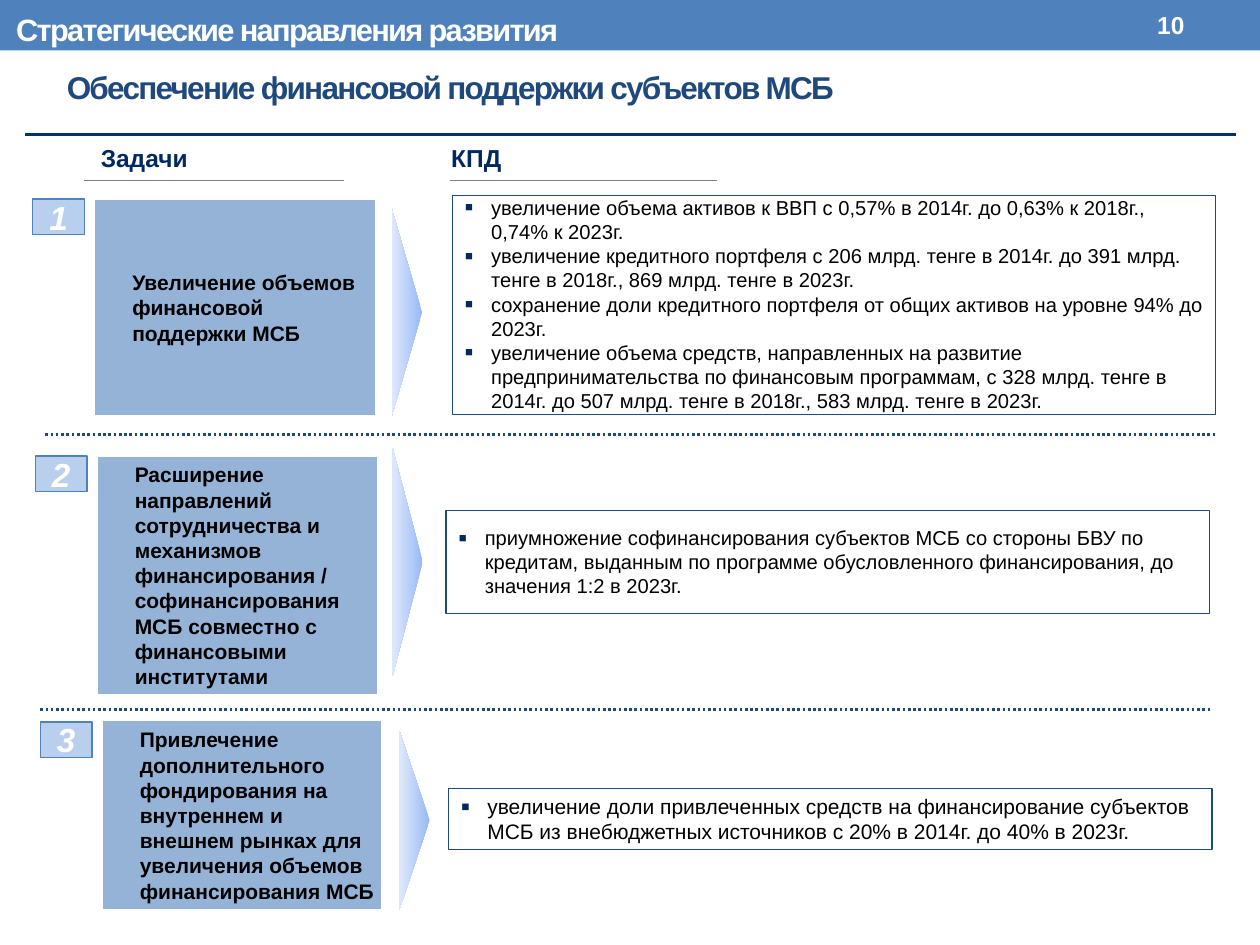
from lxml.etree import SubElement as Sub
from pptx import Presentation
from pptx.dml.color import RGBColor
from pptx.enum.dml import MSO_LINE
from pptx.enum.shapes import MSO_CONNECTOR, MSO_SHAPE as Kind
from pptx.enum.text import MSO_ANCHOR as Anchor, MSO_AUTO_SIZE as Auto, PP_ALIGN as Align
from pptx.oxml.ns import qn
from pptx.util import Inches, Pt

BLUE, NAVY, DARK, WHITE, BLACK = "4F81BD", "1F497D", "002960", "FFFFFF", "000000"

# number spot, task box, task text, space before and after the task
TASKS = [
    ((0.26, 1.58), (0.75, 1.58, 2.23, 1.72),
     "Увеличение объемов финансовой поддержки МСБ", 0, 3),
    ((0.28, 3.62), (0.77, 3.62, 2.23, 1.89),
     "Расширение направлений сотрудничества и механизмов финансирования / "
     "софинансирования МСБ совместно с финансовыми институтами", 4, 3),
    ((0.32, 5.73), (0.81, 5.72, 2.22, 1.5),
     "Привлечение дополнительного фондирования на внутреннем и внешнем рынках "
     "для увеличения объемов финансирования МСБ", 0, 0),
]
# box, top and bottom inset, text size, space after, items
GOALS = [
    ((3.59, 1.55, 6.06, 1.74), 0, 11.5, 0, [
        "увеличение объема активов к ВВП с 0,57% в 2014г. до 0,63% к 2018г., 0,74% к 2023г.",
        "увеличение кредитного портфеля с 206 млрд. тенге в 2014г. до 391 млрд. тенге "
        "в 2018г., 869 млрд. тенге в 2023г.",
        "сохранение доли кредитного портфеля от общих активов на уровне 94% до 2023г.",
        "увеличение объема средств, направленных на развитие предпринимательства по "
        "финансовым программам, с 328 млрд. тенге в 2014г. до 507 млрд. тенге в 2018г., "
        "583 млрд. тенге в 2023г."]),
    ((3.54, 4.05, 6.06, 0.82), 0.12, 11.5, 6, [
        "приумножение софинансирования субъектов МСБ со стороны БВУ по кредитам, "
        "выданным по программе обусловленного финансирования, до значения 1:2 в 2023г."]),
    ((3.56, 6.26, 6.06, 0.48), 0.04, 12, 6, [
        "увеличение доли привлеченных средств на финансирование субъектов МСБ из "
        "внебюджетных источников с 20% в 2014г. до 40% в 2023г."]),
]
WEDGES = [(2.41, 2.36, 1.64), (2.33, 4.34, 1.81), (2.58, 6.39, 1.42)]


def rgb(code):
    return RGBColor.from_string(code)


def place(box):
    return [Inches(v) for v in box]


def write(shape, lines, size, color, bold=True, italic=False, align=Align.LEFT,
          anchor=Anchor.MIDDLE, inset=(0.1, 0.05, 0.1, 0.05), tight=False):
    frame = shape.text_frame
    frame.text = "\n".join(lines)
    frame.word_wrap, frame.auto_size = True, Auto.NONE
    frame.vertical_anchor = anchor
    (frame.margin_left, frame.margin_top,
     frame.margin_right, frame.margin_bottom) = place(inset)
    for para in frame.paragraphs:
        para.alignment = align
        for run in para.runs:
            font = run.font
            font.name, font.size, font.bold, font.italic = "Arial", Pt(size), bold, italic
            font.color.rgb = rgb(color)
            if tight:
                run._r.get_or_add_rPr().set("spc", "-100")
    return frame.paragraphs


def label(slide, box, text, size, color, **style):
    write(slide.shapes.add_textbox(*place(box)), [text], size, color, **style)


def rect(slide, box, fill=None, line=None):
    shape = slide.shapes.add_shape(Kind.RECTANGLE, *place(box))
    shape.shadow.inherit = False
    if fill:
        shape.fill.solid()
        shape.fill.fore_color.rgb = rgb(fill)
    else:
        shape.fill.background()
    if line:
        shape.line.color.rgb = rgb(line)
        shape.line.width = Pt(0.75)
    else:
        shape.line.fill.background()
    return shape


def rule(slide, left, right, y, color, width, dash=None):
    line = slide.shapes.add_connector(
        MSO_CONNECTOR.STRAIGHT, *place((left, y, right, y)))
    line.line.color.rgb = rgb(color)
    line.line.width = Pt(width)
    if dash:
        line.line.dash_style = dash
    Sub(line._element.spPr, qn("a:effectLst"))


def badge(slide, spot, num):
    shape = rect(slide, (*spot, 0.41, 0.28), "B8D0ED", BLUE)
    para, = write(shape, [str(num)], 19, WHITE, italic=True,
                  align=Align.CENTER, inset=(0, 0, 0, 0))
    para.space_before = Pt(2)


def task(slide, box, text, before, after):
    shape = rect(slide, box, BLUE, WHITE)
    tint = shape._element.spPr.find(qn("a:solidFill"))[0]
    Sub(tint, qn("a:alpha"), val="60000")
    para, = write(shape, [text], 12, BLACK, inset=(0.2, 0.05, 0.05, 0.05))
    para.space_before, para.space_after = Pt(before), Pt(after)
    para._p.get_or_add_pPr().set("marL", str(Inches(0.1)))


def goal(slide, box, pad, size, after, items):
    shape = rect(slide, box, line=NAVY)
    for para in write(shape, items, size, BLACK, bold=False, anchor=Anchor.TOP,
                      inset=(0.1, pad, 0.1, pad)):
        para.space_after = Pt(after)
        props = para._p.get_or_add_pPr()
        props.set("marL", str(Inches(0.21)))
        props.set("indent", str(-Inches(0.21)))
        Sub(Sub(props, qn("a:buClr")), qn("a:srgbClr"), val=DARK)
        Sub(props, qn("a:buSzPct"), val="125000")
        Sub(props, qn("a:buFont"), typeface="Arial")
        Sub(props, qn("a:buChar"), char="▪")


def wedge(slide, left, top, width):
    """Triangle turned to point right, fading towards its base."""
    shape = slide.shapes.add_shape(
        Kind.ISOSCELES_TRIANGLE, *place((left, top, width, 0.24)))
    shape.rotation = 90
    shape.shadow.inherit = False
    shape.line.fill.background()
    shape.fill.gradient()
    shape.fill.gradient_angle = 270
    for stop, color in zip(shape.fill.gradient_stops, ("98B9F6", "E0E9FB")):
        stop.color.rgb = rgb(color)


def header(slide):
    rect(slide, (0, 0, 10, 0.4), BLUE)
    title = slide.shapes.title
    title.left, title.top, title.width, title.height = place((0.43, 0.46, 9.29, 0.46))
    write(title, ["Обеспечение финансовой поддержки субъектов МСБ"], 18, NAVY, tight=True)
    label(slide, (0.03, 0, 9.29, 0.46), "Стратегические направления развития",
          17.6, WHITE, tight=True)
    label(slide, (8.33, 0.02, 1.17, 0.36), "10", 14, WHITE, align=Align.RIGHT)
    rule(slide, 0.2, 9.81, 1.07, "003366", 1.75)
    heads = [("Задачи", (0.8, 1.13, 2.06, 0.26), Align.LEFT, 0.67, 2.73),
             ("КПД", (2.56, 1.13, 2.44, 0.26), Align.CENTER, 3.57, 5.69)]
    for text, box, align, left, right in heads:
        label(slide, box, text, 14, DARK, align=align, anchor=Anchor.BOTTOM,
              inset=(0, 0, 0, 0.02))
        rule(slide, left, right, 1.43, "808080", 0.75)


def main():
    deck = Presentation()
    deck.slide_width, deck.slide_height = Inches(10), Inches(7.5)
    slide = deck.slides.add_slide(deck.slide_layouts[5])
    header(slide)
    for num, (spot, *rest) in enumerate(TASKS, 1):
        task(slide, *rest)
        badge(slide, spot, num)
    for left, right, y in ((0.36, 9.64, 3.45), (0.32, 9.61, 5.63)):
        rule(slide, left, right, y, NAVY, 1.5, MSO_LINE.ROUND_DOT)
    for row in GOALS:
        goal(slide, *row)
    for row in WEDGES:
        wedge(slide, *row)
    deck.save("out.pptx")


if __name__ == "__main__":
    main()
